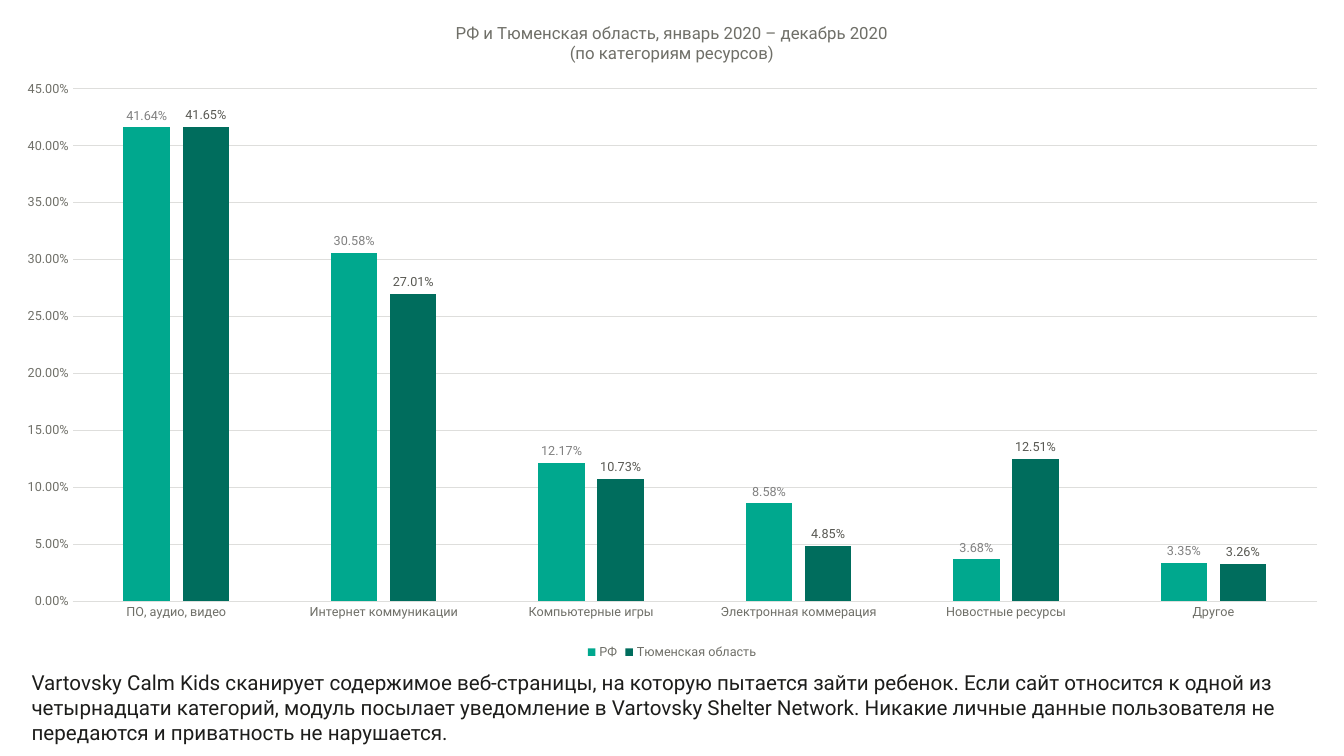
from dataclasses import dataclass

from lxml import etree
from pptx import Presentation
from pptx.chart.data import CategoryChartData
from pptx.dml.color import RGBColor
from pptx.enum.chart import XL_CHART_TYPE, XL_LABEL_POSITION, XL_LEGEND_POSITION, XL_TICK_MARK
from pptx.oxml import parse_xml
from pptx.oxml.ns import nsdecls
from pptx.util import Pt

COLUMNS = XL_CHART_TYPE.COLUMN_CLUSTERED
OUTSIDE_END = XL_LABEL_POSITION.OUTSIDE_END
BOTTOM = XL_LEGEND_POSITION.BOTTOM
NO_TICKS = XL_TICK_MARK.NONE


@dataclass(frozen=True)
class Theme:
    font: str = "Roboto"
    title_size: float = 12
    chart_size: float = 9
    note_size: float = 14.7
    muted: str = "6F6F68"
    grid: str = "DEDEDC"
    note: str = "1D1D1B"


theme = Theme()
PERCENT = "0.00%"
CATEGORIES = ["ПО, аудио, видео", "Интернет коммуникации", "Компьютерные игры",
              "Электронная коммерация", "Новостные ресурсы", "Другое"]
# name, values, column colour, label colour
SERIES = [
    ("РФ", [0.4164, 0.3058, 0.1217, 0.0858, 0.0368, 0.0335], "00A88E", "808080"),
    ("Тюменская область", [0.4165, 0.2701, 0.1073, 0.0485, 0.1251, 0.0326], "006D5D", "585852"),
]
TITLE_LINES = ["РФ и Тюменская область, январь 2020 – декабрь 2020", "(по категориям ресурсов)"]
NOTE = ("Vartovsky Calm Kids сканирует содержимое веб-страницы, на которую пытается зайти ребенок. "
        "Если сайт относится к одной из четырнадцати категорий, модуль посылает уведомление в "
        "Vartovsky Shelter Network. Никакие личные данные пользователя не передаются и "
        "приватность не нарушается.")
# inner plot area as fractions of the chart
PLOT_AREA = {"x": 0.054, "y": 0.134, "w": 0.926, "h": 0.772}


def set_font(font, size, color):
    font.name = theme.font
    font.size = Pt(size)
    font.bold = False
    font.color.rgb = RGBColor.from_string(color)


def set_line(line, color):
    line.width = Pt(0.75)
    line.color.rgb = RGBColor.from_string(color)


presentation = Presentation()
presentation.slide_width = Pt(960)
presentation.slide_height = Pt(540)
slide = presentation.slides.add_slide(presentation.slide_layouts[6])

# Chart
chart_data = CategoryChartData(number_format=PERCENT)
chart_data.categories = CATEGORIES
for name, values, _, _ in SERIES:
    chart_data.add_series(name, values)
chart = slide.shapes.add_chart(COLUMNS, 0, 0, Pt(960), Pt(474), chart_data).chart
set_font(chart.font, theme.chart_size, theme.muted)

chart.has_title = True
title_frame = chart.chart_title.text_frame
for index, line_text in enumerate(TITLE_LINES):
    paragraph = title_frame.add_paragraph() if index else title_frame.paragraphs[0]
    run = paragraph.add_run()
    run.text = line_text
    set_font(run.font, theme.title_size, theme.muted)
chart.chart_title.include_in_layout = False

chart.has_legend = True
chart.legend.position = BOTTOM
chart.legend.include_in_layout = False
set_font(chart.legend.font, theme.chart_size, theme.muted)

for axis in (chart.category_axis, chart.value_axis):
    axis.major_tick_mark = NO_TICKS
    axis.minor_tick_mark = NO_TICKS
    set_font(axis.tick_labels.font, theme.chart_size, theme.muted)
set_line(chart.category_axis.format.line, theme.grid)

value_axis = chart.value_axis
value_axis.minimum_scale = 0
value_axis.maximum_scale = 0.45
value_axis.major_unit = 0.05
value_axis.format.line.fill.background()
value_axis.tick_labels.number_format = PERCENT
value_axis.tick_labels.number_format_is_linked = False
set_line(value_axis.major_gridlines.format.line, theme.grid)

plot = chart.plots[0]
plot.gap_width = 219
plot.overlap = -27
plot.vary_by_categories = False
for series, (_, _, column_color, label_color) in zip(plot.series, SERIES):
    series.format.fill.solid()
    series.format.fill.fore_color.rgb = RGBColor.from_string(column_color)
    labels = series.data_labels
    labels.show_value = True
    labels.position = OUTSIDE_END
    labels.number_format = PERCENT
    labels.number_format_is_linked = False
    set_font(labels.font, theme.chart_size, label_color)

layout = parse_xml(f'<c:layout {nsdecls("c")}><c:manualLayout/></c:layout>')
settings = {"layoutTarget": "inner", "xMode": "edge", "yMode": "edge", **PLOT_AREA}
for tag, value in settings.items():
    etree.SubElement(layout[0], f"{{{layout.nsmap['c']}}}{tag}", val=str(value))
plot_area = chart.element.chart.plotArea if hasattr(chart, "element") else chart._chartSpace.chart.plotArea
for empty_layout in plot_area.findall("c:layout", layout.nsmap):
    plot_area.remove(empty_layout)
plot_area.insert(0, layout)

# Note below the chart
note_box = slide.shapes.add_textbox(Pt(13), Pt(474), Pt(934), Pt(62.5))
note_frame = note_box.text_frame
note_frame.word_wrap = True
note_frame.margin_left = note_frame.margin_right = Pt(9.5)
note_frame.margin_top = note_frame.margin_bottom = Pt(4.8)
run = note_frame.paragraphs[0].add_run()
run.text = NOTE
set_font(run.font, theme.note_size, theme.note)

presentation.save("out.pptx")
